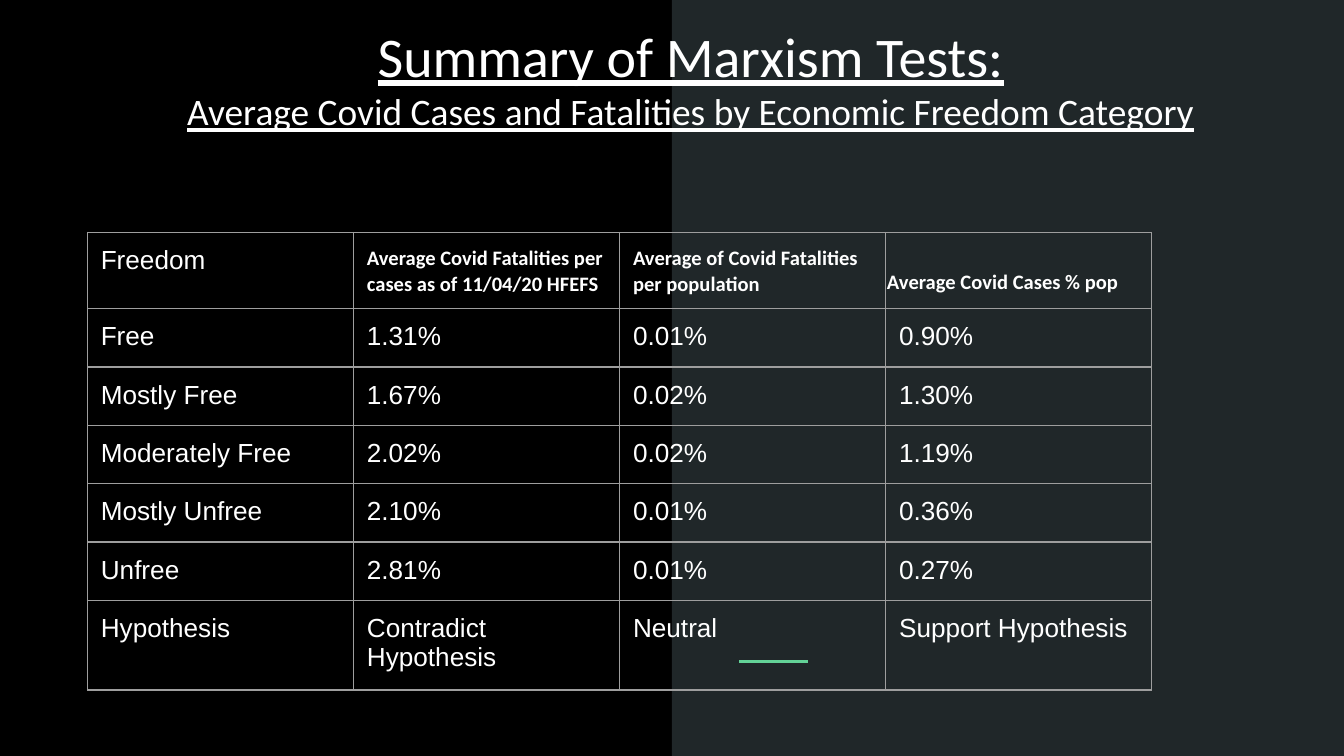
from lxml import etree
from pptx import Presentation
from pptx.dml.color import RGBColor
from pptx.enum.shapes import MSO_CONNECTOR, MSO_SHAPE
from pptx.enum.text import MSO_ANCHOR, PP_ALIGN
from pptx.oxml.ns import qn
from pptx.util import Inches, Pt

RECTANGLE = MSO_SHAPE.RECTANGLE
STRAIGHT = MSO_CONNECTOR.STRAIGHT
CENTER = PP_ALIGN.CENTER
TOP, BOTTOM = MSO_ANCHOR.TOP, MSO_ANCHOR.BOTTOM

WIDTH = 10
HEIGHT = WIDTH * 9 / 16
COLUMN_WIDTH, ROW_HEIGHT = 1.98, 0.42
TABLE_LEFT, TABLE_TOP, TABLE_FRAME = 0.65, 1.73, 3.28
INSET, NARROW_INSET = 0.1, 0.01
COLORS = {
    "background": "000000",
    "panel": "202729",
    "accent": "63D297",
    "text": "FFFFFF",
    "border": "9E9E9E",
}

TITLE = [
    ("Summary of Marxism Tests:", 30),
    ("Average Covid Cases and Fatalities by Economic Freedom Category", 20),
]
ROWS = [
    ("Freedom", "Average Covid Fatalities per cases as of 11/04/20 HFEFS",
     "Average of Covid Fatalities per population", "Average Covid Cases % pop"),
    ("Free", "1.31%", "0.01%", "0.90%"),
    ("Mostly Free", "1.67%", "0.02%", "1.30%"),
    ("Moderately Free", "2.02%", "0.02%", "1.19%"),
    ("Mostly Unfree", "2.10%", "0.01%", "0.36%"),
    ("Unfree", "2.81%", "0.01%", "0.27%"),
    ("Hypothesis", "Contradict Hypothesis", "Neutral", "Support Hypothesis"),
]


def color(name):
    return RGBColor.from_string(COLORS[name])


def style_text(para, size, font_name, bold=False, underline=False):
    for span in para.runs:
        span.font.size = Pt(size)
        span.font.name = font_name
        span.font.bold = bold
        span.font.underline = underline
        span.font.color.rgb = color("text")


def set_margins(frame, side, bottom):
    """Set left, top and right margins to side, and the bottom one apart."""
    frame.margin_left = frame.margin_top = frame.margin_right = Inches(side)
    frame.margin_bottom = Inches(bottom)


def add_backdrop(page):
    fill = page.background.fill
    fill.solid()
    fill.fore_color.rgb = color("background")
    half = Inches(WIDTH / 2)
    panel = page.shapes.add_shape(RECTANGLE, half, 0, half, Inches(HEIGHT))
    panel.shadow.inherit = False
    panel.fill.solid()
    panel.fill.fore_color.rgb = color("panel")
    panel.line.fill.background()


def add_accent_line(page, left, right, top):
    line = page.shapes.add_connector(
        STRAIGHT, Inches(left), Inches(top), Inches(right), Inches(top))
    line.line.color.rgb = color("accent")
    line.line.width = Pt(1.5)
    etree.SubElement(line._element.spPr, qn("a:effectLst"))


def add_title(page):
    box = page.shapes.add_textbox(
        Inches(1.21), Inches(0.06), Inches(7.86), Inches(1.44))
    frame = box.text_frame
    frame.word_wrap = True
    frame.vertical_anchor = TOP
    set_margins(frame, INSET, INSET)
    frame.text = "\n".join(text for text, size in TITLE)
    for para, (text, size) in zip(frame.paragraphs, TITLE):
        para.alignment = CENTER
        style_text(para, size, "Calibri", underline=True)


def add_borders(cell):
    properties = cell._tc.get_or_add_tcPr()
    for position, side in enumerate(("lnL", "lnR", "lnT", "lnB")):
        border = etree.Element(qn(f"a:{side}"), w=str(Pt(0.75)))
        fill = etree.SubElement(border, qn("a:solidFill"))
        etree.SubElement(fill, qn("a:srgbClr"), val=COLORS["border"])
        properties.insert(position, border)


def fill_cell(cell, text, is_heading, is_low):
    """Write one cell; a low one sits at the bottom with narrow margins."""
    cell.text = text
    cell.fill.background()
    cell.vertical_anchor = BOTTOM if is_low else TOP
    set_margins(cell, NARROW_INSET if is_low else INSET, INSET)
    size, font_name = (11, "Calibri") if is_heading else (14, "Arial")
    style_text(cell.text_frame.paragraphs[0], size, font_name, bold=is_heading)
    add_borders(cell)


def add_results_table(page):
    row_count, column_count = len(ROWS), len(ROWS[0])
    holder = page.shapes.add_table(
        row_count, column_count, Inches(TABLE_LEFT), Inches(TABLE_TOP),
        Inches(column_count * COLUMN_WIDTH), Inches(row_count * ROW_HEIGHT))
    table = holder.table
    table.first_row = table.horz_banding = False
    for column in table.columns:
        column.width = Inches(COLUMN_WIDTH)
    for row_index, texts in enumerate(ROWS):
        table.rows[row_index].height = Inches(ROW_HEIGHT)
        for column_index, text in enumerate(texts):
            is_heading = row_index == 0 and column_index > 0
            is_low = is_heading and column_index == column_count - 1
            fill_cell(table.cell(row_index, column_index), text, is_heading, is_low)
    holder.width = holder.height = Inches(TABLE_FRAME)


def main():
    deck = Presentation()
    deck.slide_width, deck.slide_height = Inches(WIDTH), Inches(HEIGHT)
    page = deck.slides.add_slide(deck.slide_layouts[6])
    add_backdrop(page)
    add_accent_line(page, 5.5, 6.01, 4.92)
    add_title(page)
    add_results_table(page)
    deck.save("out.pptx")


if __name__ == "__main__":
    main()
